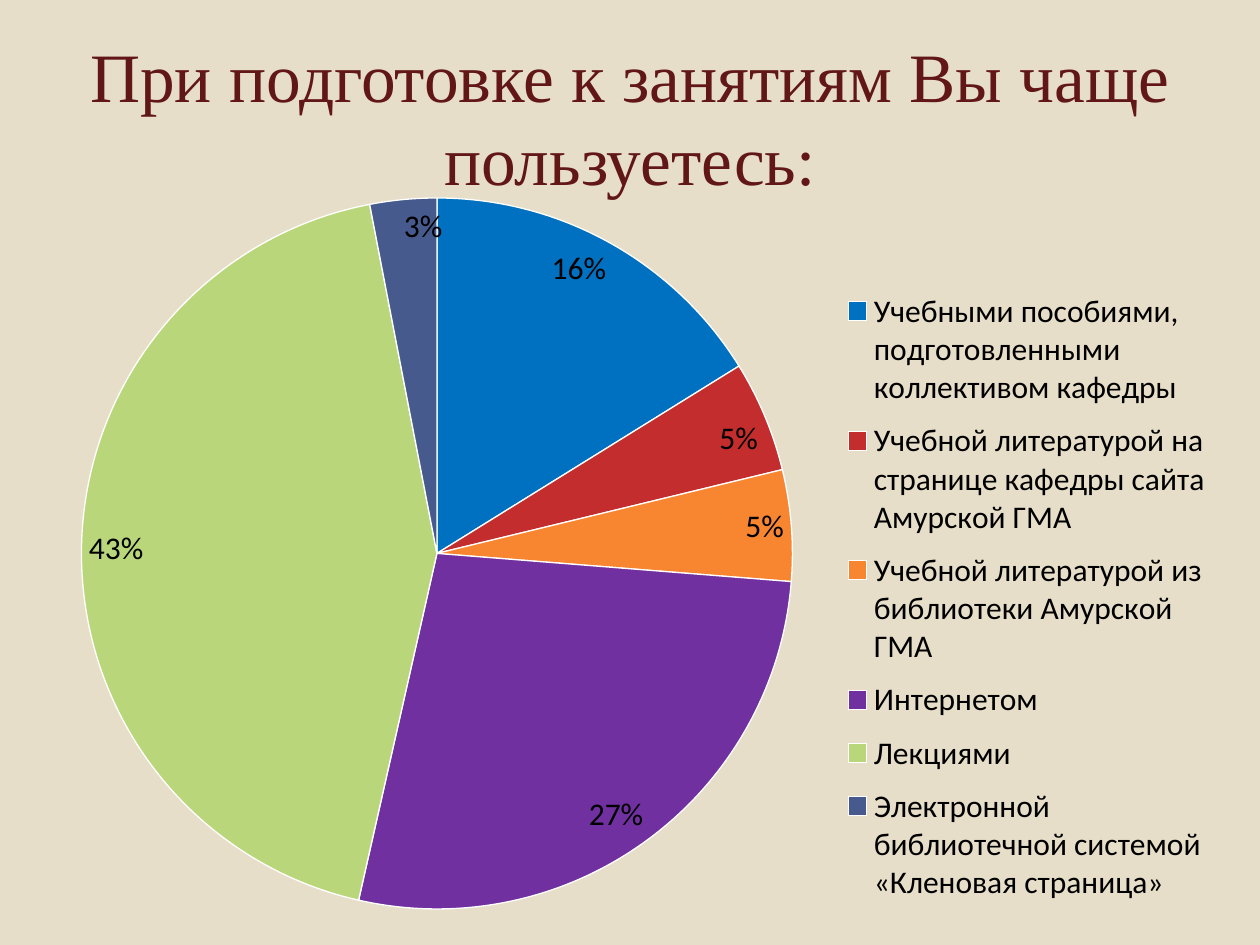
from lxml import etree
from pptx import Presentation
from pptx.chart.data import CategoryChartData
from pptx.dml.color import RGBColor
from pptx.enum.chart import XL_CHART_TYPE as ChartType
from pptx.enum.chart import XL_LABEL_POSITION as LabelPosition
from pptx.enum.chart import XL_LEGEND_POSITION as LegendPosition
from pptx.enum.text import MSO_ANCHOR as Anchor
from pptx.enum.text import PP_ALIGN as Align
from pptx.oxml.ns import qn
from pptx.util import Inches, Pt

ANSWERS = [
    ("Учебными пособиями, подготовленными коллективом кафедры", 16, "0070C0"),
    ("Учебной литературой на странице кафедры сайта Амурской ГМА", 5, "C32D2E"),
    ("Учебной литературой из библиотеки Амурской ГМА", 5, "F88631"),
    ("Интернетом", 27, "7030A0"),
    ("Лекциями", 43, "B9D77A"),
    ("Электронной библиотечной системой «Кленовая страница»", 3, "475A8D"),
]


def color(value):
    return RGBColor.from_string(value)


def set_font(font, name, size, value):
    font.name = name
    font.size = Pt(size)
    font.color.rgb = color(value)


def add_title(slide, text):
    title = slide.shapes.title
    title.left, title.top = Inches(0.5), Inches(0.3)
    title.width, title.height = Inches(9), Inches(1.25)
    text_frame = title.text_frame
    text_frame.text = text
    text_frame.word_wrap = True
    text_frame.vertical_anchor = Anchor.MIDDLE
    paragraph = text_frame.paragraphs[0]
    paragraph.alignment = Align.CENTER
    set_font(paragraph.runs[0].font, "Times New Roman", 39.6, "621717")


def set_layout(element, before, left, top, width, height, inner=False):
    for old in element.findall(qn("c:layout")):
        element.remove(old)
    layout = etree.Element(qn("c:layout"))
    manual = etree.SubElement(layout, qn("c:manualLayout"))
    settings = [("layoutTarget", "inner")] if inner else []
    settings += [("xMode", "edge"), ("yMode", "edge")]
    settings += [("x", left), ("y", top), ("w", width), ("h", height)]
    for tag, value in settings:
        etree.SubElement(manual, qn(f"c:{tag}")).set("val", str(value))
    element.find(qn(before)).addprevious(layout)


def add_pie(slide, answers):
    data = CategoryChartData()
    data.categories = [name for name, _, _ in answers]
    data.add_series("Series 1", [value for _, value, _ in answers])
    chart = slide.shapes.add_chart(
        ChartType.PIE, Inches(0.35), Inches(1.07), Inches(9.45), Inches(6.27), data
    ).chart
    chart.has_title = False
    set_font(chart.font, "Calibri", 18, "000000")

    plot = chart.plots[0]
    plot.vary_by_categories = True
    for index, (_, _, fill) in enumerate(answers):
        slice_format = plot.series[0].points[index].format
        slice_format.fill.solid()
        slice_format.fill.fore_color.rgb = color(fill)
        slice_format.line.color.rgb = color("FFFFFF")
        slice_format.line.width = Pt(0.75)

    plot.has_data_labels = True
    labels = plot.data_labels
    labels.show_value = False
    labels.show_percentage = True
    labels.number_format = "0%"
    labels.number_format_is_linked = False
    labels.position = LabelPosition.INSIDE_END
    set_font(labels.font, "Calibri", 18, "000000")

    chart.has_legend = True
    legend = chart.legend
    legend.position = LegendPosition.RIGHT
    legend.include_in_layout = False
    set_font(legend.font, "Calibri", 18, "000000")
    plot_area = chart.element.find(".//" + qn("c:plotArea"))
    legend_area = chart.element.find(".//" + qn("c:legend"))
    set_layout(plot_area, "c:pieChart", 0.03, 0.08, 0.6, 0.9, inner=True)
    set_layout(legend_area, "c:overlay", 0.67, 0.18, 0.31, 0.81)


def main():
    presentation = Presentation()
    presentation.slide_width = Inches(10)
    presentation.slide_height = Inches(7.5)
    slide = presentation.slides.add_slide(presentation.slide_layouts[5])
    slide.background.fill.solid()
    slide.background.fill.fore_color.rgb = color("E7DEC9")
    add_title(slide, "При подготовке к занятиям Вы чаще пользуетесь:")
    add_pie(slide, ANSWERS)
    presentation.save("out.pptx")


if __name__ == "__main__":
    main()
